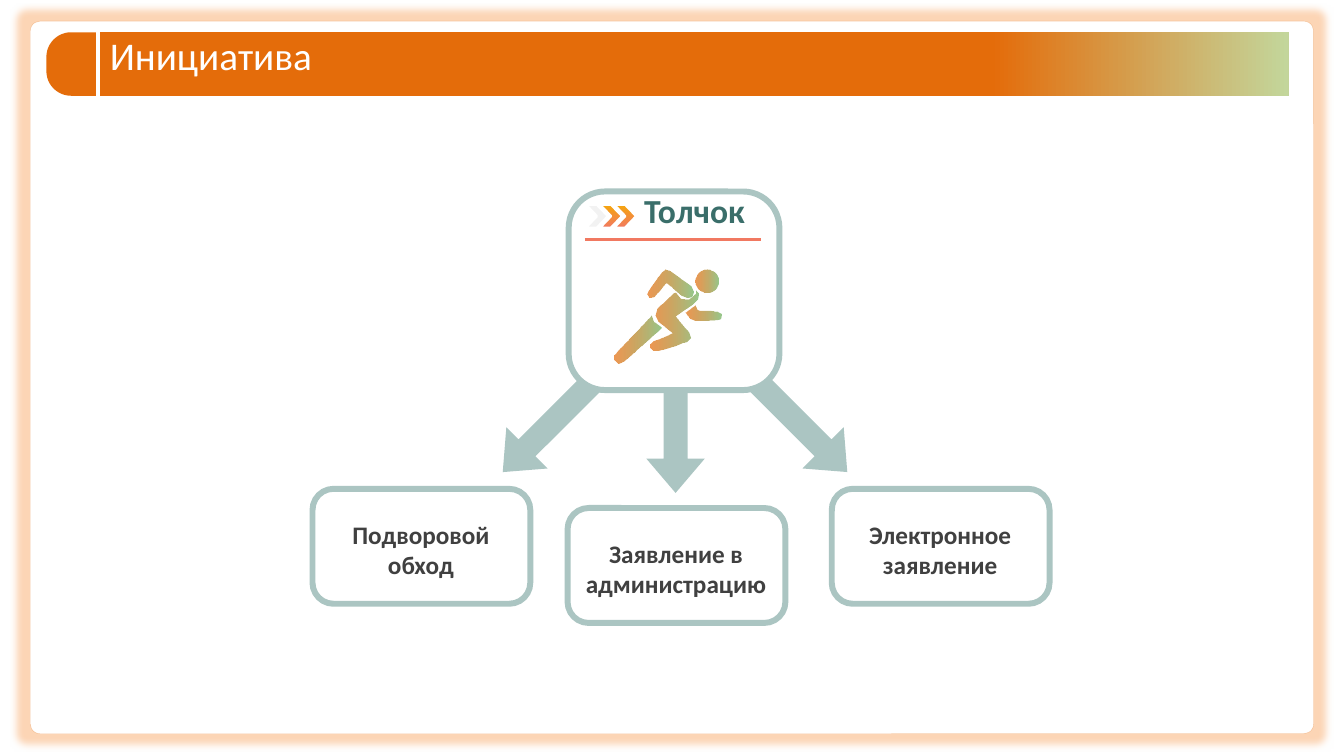
from pptx import Presentation
from pptx.dml.color import RGBColor
from pptx.enum.shapes import MSO_CONNECTOR, MSO_SHAPE
from pptx.enum.text import MSO_ANCHOR, PP_ALIGN
from pptx.oxml import parse_xml
from pptx.oxml.ns import nsdecls, qn
from pptx.util import Inches, Pt

ORANGE, SAGE, WHITE = "E46C0A", "ABC5C2", "FFFFFF"
AMBER, CORAL = "F5A70B", "F17961"
BODY = [(0, ORANGE, 70), (100, "96C78B", 100)]

# Outlines of the runner, in inches
LIMBS = [
    # Trunk and front leg
    [(6.7, 3.14), (6.76, 3.21), (6.83, 3.29), (6.85, 3.35), (6.81, 3.39),
     (6.77, 3.4), (6.7, 3.43), (6.6, 3.46), (6.52, 3.48), (6.48, 3.48),
     (6.45, 3.45), (6.45, 3.41), (6.48, 3.38), (6.54, 3.36), (6.63, 3.32),
     (6.67, 3.3), (6.64, 3.28), (6.53, 3.19), (6.5, 3.13), (6.52, 3.06),
     (6.68, 2.91), (6.7, 2.9), (6.75, 2.96), (6.83, 2.97), (6.9, 2.91),
     (6.9, 2.88), (6.93, 2.91), (6.92, 2.97), (6.87, 3.02)],
    # Back leg
    [(6.46, 3.13), (6.48, 3.19), (6.56, 3.25), (6.53, 3.28), (6.2, 3.58),
     (6.18, 3.59), (6.14, 3.61), (6.1, 3.57), (6.1, 3.52), (6.21, 3.4),
     (6.38, 3.22)],
    # Back arm
    [(6.81, 2.95), (6.76, 2.93), (6.62, 2.81), (6.6, 2.81), (6.49, 2.94),
     (6.44, 2.95), (6.42, 2.91), (6.43, 2.88), (6.56, 2.7), (6.6, 2.67),
     (6.64, 2.68), (6.85, 2.83), (6.88, 2.89), (6.86, 2.94)],
    # Front arm
    [(6.8, 3.1), (6.9, 3.03), (6.92, 3.07), (6.94, 3.08), (7.04, 3.08),
     (7.12, 3.09), (7.16, 3.11), (7.15, 3.16), (7.12, 3.17), (6.95, 3.18),
     (6.9, 3.18), (6.85, 3.16)],
]


def color(code):
    return RGBColor.from_string(code)


def blend(shape, stops, angle):
    marks = "".join(
        f'<a:gs pos="{pos * 1000}"><a:srgbClr val="{code}">'
        f'<a:alpha val="{alpha * 1000}"/></a:srgbClr></a:gs>'
        for pos, code, alpha in stops)
    shape.fill.gradient()
    old = shape._element.spPr.find(qn("a:gradFill"))
    old.getparent().replace(old, parse_xml(
        f'<a:gradFill {nsdecls("a")} rotWithShape="1"><a:gsLst>{marks}</a:gsLst>'
        f'<a:lin ang="{angle * 60000}" scaled="0"/></a:gradFill>'))


def paint(shape, fill, line=None, width=0, angle=0):
    shape.shadow.inherit = False
    if isinstance(fill, list):
        blend(shape, fill, angle)
    else:
        shape.fill.solid()
        shape.fill.fore_color.rgb = color(fill)
    if line:
        shape.line.color.rgb = color(line)
        shape.line.width = Pt(width)
    else:
        shape.line.fill.background()


def block(slide, kind, box, fill, line=None, width=0, adj=(), turn=0, angle=0):
    shape = slide.shapes.add_shape(kind, *map(Inches, box))
    for i, value in enumerate(adj):
        shape.adjustments[i] = value
    shape.rotation = turn
    paint(shape, fill, line, width, angle)
    return shape


def label(slide, box, lines, size, code, bold=True, align=PP_ALIGN.LEFT,
          pitch=None, anchor=MSO_ANCHOR.TOP):
    frame = slide.shapes.add_textbox(*map(Inches, box)).text_frame
    frame.word_wrap = True
    frame.vertical_anchor = anchor
    frame.text = "\n".join(lines)
    for para in frame.paragraphs:
        para.alignment = align
        if pitch:
            para.line_spacing = Pt(pitch)
        para.font.name = "Calibri"
        para.font.size = Pt(size)
        para.font.bold = bold
        para.font.color.rgb = color(code)


def panel(slide):
    # Sheet with a soft glow
    sheet = block(slide, MSO_SHAPE.ROUNDED_RECTANGLE, (0.3, 0.21, 12.73, 7.07),
                  WHITE, ORANGE, 0.25, [0.014])
    tint = sheet._element.spPr.find(".//" + qn("a:ln")).find(".//" + qn("a:srgbClr"))
    tint.append(parse_xml(f'<a:alpha {nsdecls("a")} val="39000"/>'))
    sheet._element.spPr.find(qn("a:effectLst")).append(parse_xml(
        f'<a:outerShdw {nsdecls("a")} blurRad="{Pt(5)}" sx="102000" sy="103000" '
        'algn="ctr" rotWithShape="0"><a:srgbClr val="FCD5B5"/></a:outerShdw>'))
    # Title bar
    block(slide, MSO_SHAPE.ROUND_2_SAME_RECTANGLE, (0.39, 0.39, 0.63, 0.49),
          ORANGE, adj=[0.5, 0], turn=270)
    block(slide, MSO_SHAPE.RECTANGLE, (0.99, 0.32, 11.79, 0.63),
          [(0, ORANGE, 100), (75, ORANGE, 100), (100, "C3D69B", 100)])
    label(slide, (0.99, 0.34, 11.09, 0.59), ["Инициатива"], 28, WHITE,
          bold=False, pitch=20, anchor=MSO_ANCHOR.MIDDLE)


def runner(slide):
    for limb in LIMBS:
        spots = [(Inches(x), Inches(y)) for x, y in limb]
        pen = slide.shapes.build_freeform(*spots[0])
        pen.add_line_segments(spots[1:])
        paint(pen.convert_to_shape(), BODY)
    block(slide, MSO_SHAPE.OVAL, (6.9, 2.67, 0.23, 0.23), BODY)


def card(slide, left, top, lines):
    block(slide, MSO_SHAPE.ROUNDED_RECTANGLE, (left, top, 2.16, 1.14),
          WHITE, SAGE, 4.25, [0.183])
    label(slide, (left - 0.03, top + 0.25, 2.21, 0.71), lines, 18, "404040",
          align=PP_ALIGN.CENTER)


def push(slide):
    block(slide, MSO_SHAPE.ROUNDED_RECTANGLE, (5.64, 1.9, 2.09, 1.97),
          WHITE, SAGE, 4.25, [0.183])
    runner(slide)
    label(slide, (6.29, 2.1, 1.44, 0.24), ["Толчок"], 24, "3A6E6A", pitch=10)
    # Chevrons
    warm = [(0, AMBER, 100), (100, CORAL, 100)]
    for left, fill in ((5.95, warm), (6.09, warm), (5.81, "F2F2F2")):
        block(slide, MSO_SHAPE.CHEVRON, (left, 2.03, 0.22, 0.23), fill,
              WHITE, 1.75, angle=90)
    # Rule under the heading
    rule = slide.shapes.add_connector(MSO_CONNECTOR.STRAIGHT, Inches(5.8),
                                      Inches(2.38), Inches(7.55), Inches(2.38))
    rule.line.color.rgb = color(CORAL)
    rule.line.width = Pt(2)
    rule._element.spPr.append(parse_xml(f'<a:effectLst {nsdecls("a")}/>'))


def main():
    deck = Presentation()
    deck.slide_width, deck.slide_height = Inches(13.33), Inches(7.5)
    slide = deck.slides.add_slide(deck.slide_layouts[6])
    panel(slide)
    # Arrows to the three cards
    for left, top, turn in ((4.72, 3.75, 135), (6.85, 3.75, 45), (5.79, 3.69, 90)):
        block(slide, MSO_SHAPE.RIGHT_ARROW, (left, top, 1.82, 0.58), SAGE,
              adj=[0.409, 0.587], turn=turn)
    push(slide)
    card(slide, 8.25, 4.85, ["Электронное", "заявление"])
    card(slide, 3.1, 4.85, ["Подворовой", "обход"])
    card(slide, 5.63, 5.04, ["Заявление в администрацию"])
    deck.save("out.pptx")


if __name__ == "__main__":
    main()
